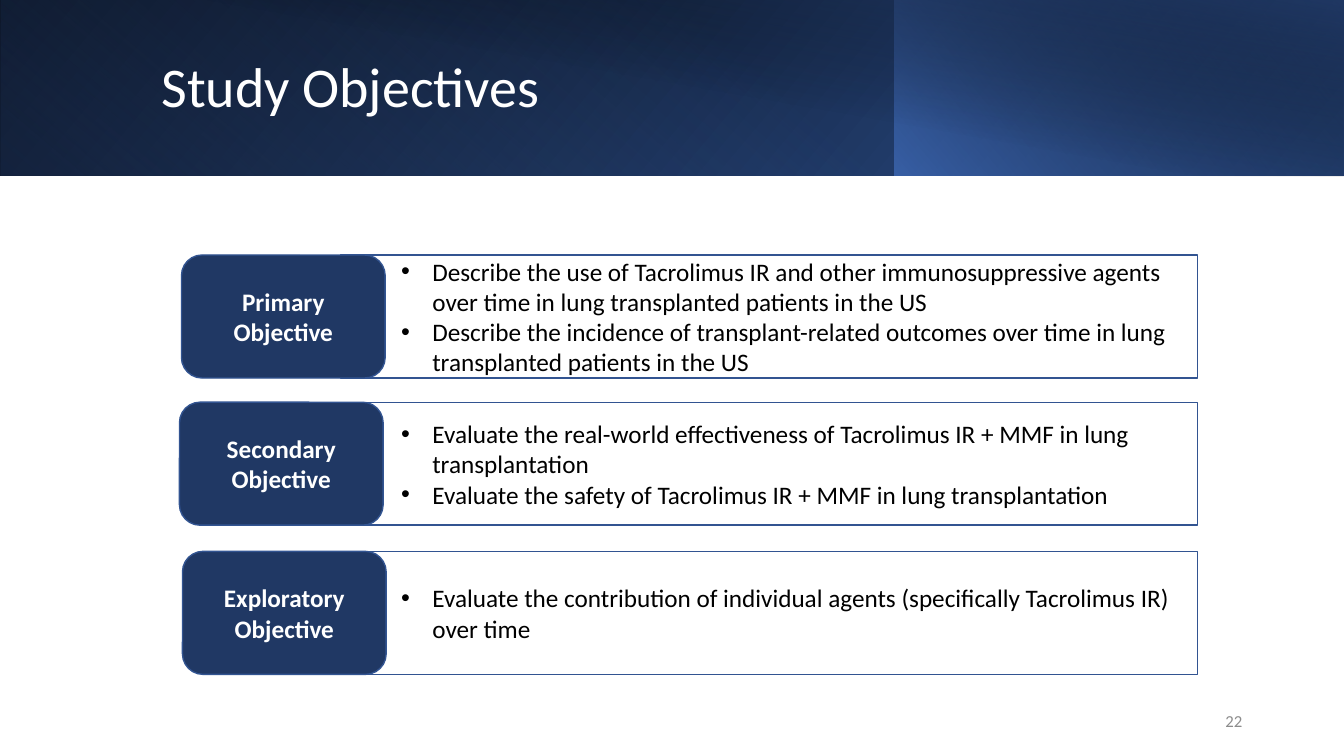
"""Build the Study Objectives slide: a gradient banner over three labelled objectives."""
import pptx
import pptx.dml.color
import pptx.enum.shapes
import pptx.enum.text
import pptx.oxml
import pptx.oxml.ns
import pptx.util
from pptx.util import Inches

COLORS = {"navy": "203864", "edge": "325491", "blue": "4472C4", "deep": "2F5597",
          "black": "000000", "white": "FFFFFF", "grey": "8C8C8C"}
FONT = "Calibri"
TITLE = "Study Objectives"
PAGE_NUMBER = "22"

OBJECTIVES = [
    {"label": "Primary Objective", "left": 1.8, "top": 2.53, "goals": [
        "Describe the use of Tacrolimus IR and other immunosuppressive agents over time "
        "in lung transplanted patients in the US",
        "Describe the incidence of transplant-related outcomes over time in lung "
        "transplanted patients in the US"]},
    {"label": "Secondary Objective", "left": 1.78, "top": 3.99, "goals": [
        "Evaluate the real-world effectiveness of Tacrolimus IR + MMF in lung transplantation",
        "Evaluate the safety of Tacrolimus IR + MMF in lung transplantation"]},
    {"label": "Exploratory Objective", "left": 1.81, "top": 5.47, "goals": [
        "Evaluate the contribution of individual agents (specifically Tacrolimus IR) over time"]},
]
GOALS_LEFT, GOALS_WIDTH, LABEL_WIDTH, ROW_HEIGHT = 3.38, 8.5, 2.02, 1.22

BANNER = [
    {"box": (0, 0, 13.33, 1.74), "flip": True, "rotation": 0, "angle": 140,
     "stops": [(0, "black", 100), (100, "deep", 100)]},
    {"box": (0, 0, 8.88, 1.74), "flip": True, "rotation": 180, "angle": 230,
     "stops": [(20, "blue", 0), (100, "navy", 55)]},
    {"box": (8.87, 0, 4.46, 1.74), "flip": True, "rotation": 0, "angle": 220,
     "stops": [(0, "blue", 66), (100, "black", 30)]},
    {"box": (0.5, 0, 12.83, 1.75), "flip": False, "rotation": 0, "angle": 280,
     "stops": [(50, "black", 0), (99, "navy", 52)]},
]

SHAPES = pptx.enum.shapes.MSO_SHAPE
ALIGN = pptx.enum.text.PP_ALIGN


def rgb(color):
    return pptx.dml.color.RGBColor.from_string(COLORS[color])


def add_box(slide, preset, box, fill=None, line=None):
    shape = slide.shapes.add_shape(preset, *map(Inches, box))
    shape.shadow.inherit = False
    if fill:
        shape.fill.solid()
        shape.fill.fore_color.rgb = rgb(fill)
    else:
        shape.fill.background()
    if line:
        shape.line.color.rgb = rgb(line)
        shape.line.width = pptx.util.Pt(1)
    else:
        shape.line.fill.background()
    return shape


def write(shape, lines, size, color, align, bold=False, bullet=False):
    frame = shape.text_frame
    frame.word_wrap = True
    frame.vertical_anchor = pptx.enum.text.MSO_ANCHOR.MIDDLE
    frame.text = "\n".join(lines)
    font_format = {"name": FONT, "size": pptx.util.Pt(size), "bold": bold}
    for paragraph in frame.paragraphs:
        paragraph.alignment = align
        font = paragraph.runs[0].font
        for attribute, value in font_format.items():
            setattr(font, attribute, value)
        font.color.rgb = rgb(color)
        if bullet:
            properties = paragraph._p.get_or_add_pPr()
            properties.set("marL", str(Inches(0.81)))
            properties.set("indent", str(Inches(-0.31)))
            for tag, key, value in (("a:buFont", "typeface", "Arial"), ("a:buChar", "char", "•")):
                mark = pptx.oxml.parse_xml(
                    f'<{tag} {pptx.oxml.ns.nsdecls("a")} {key}="{value}"/>')
                properties.append(mark)


def add_banner_layer(slide, layer):
    shape = add_box(slide, SHAPES.RECTANGLE, layer["box"])
    shape.rotation = layer["rotation"]
    properties = shape._element.spPr
    if layer["flip"]:
        properties.find(pptx.oxml.ns.qn("a:xfrm")).set("flipH", "1")
    stops = "".join(
        f'<a:gs pos="{position * 1000}"><a:srgbClr val="{COLORS[color]}">'
        f'<a:alpha val="{opacity * 1000}"/></a:srgbClr></a:gs>'
        for position, color, opacity in layer["stops"])
    gradient = pptx.oxml.parse_xml(
        f'<a:gradFill {pptx.oxml.ns.nsdecls("a")}><a:gsLst>{stops}</a:gsLst>'
        f'<a:lin ang="{layer["angle"] * 60000}" scaled="0"/></a:gradFill>')
    properties.replace(properties.find(pptx.oxml.ns.qn("a:noFill")), gradient)


def add_title(slide):
    title = slide.shapes.title
    slide.shapes._spTree.append(title._element)
    place = {"left": 1.5, "top": 0.32, "width": 10.82, "height": 1.13}
    for attribute, value in place.items():
        setattr(title, attribute, Inches(value))
    write(title, [TITLE], 40, "white", ALIGN.LEFT)
    title.text_frame.paragraphs[0].line_spacing = 0.9


def main():
    deck = pptx.Presentation()
    deck.slide_width, deck.slide_height = Inches(13.33), Inches(7.5)
    slide = deck.slides.add_slide(deck.slide_layouts[5])
    for layer in BANNER:
        add_banner_layer(slide, layer)
    add_title(slide)

    for objective in OBJECTIVES:
        top = objective["top"]
        goals = add_box(slide, SHAPES.RECTANGLE,
                        (GOALS_LEFT, top, GOALS_WIDTH, ROW_HEIGHT), line="edge")
        write(goals, objective["goals"], 18, "black", ALIGN.LEFT, bullet=True)
        label = add_box(slide, SHAPES.ROUNDED_RECTANGLE,
                        (objective["left"], top, LABEL_WIDTH, ROW_HEIGHT), "navy", "edge")
        write(label, [objective["label"]], 18, "white", ALIGN.CENTER, bold=True)

    page_number = slide.shapes.add_textbox(*map(Inches, (9.42, 6.95, 3, 0.4)))
    write(page_number, [PAGE_NUMBER], 12, "grey", ALIGN.RIGHT)
    deck.save("out.pptx")


if __name__ == "__main__":
    main()
